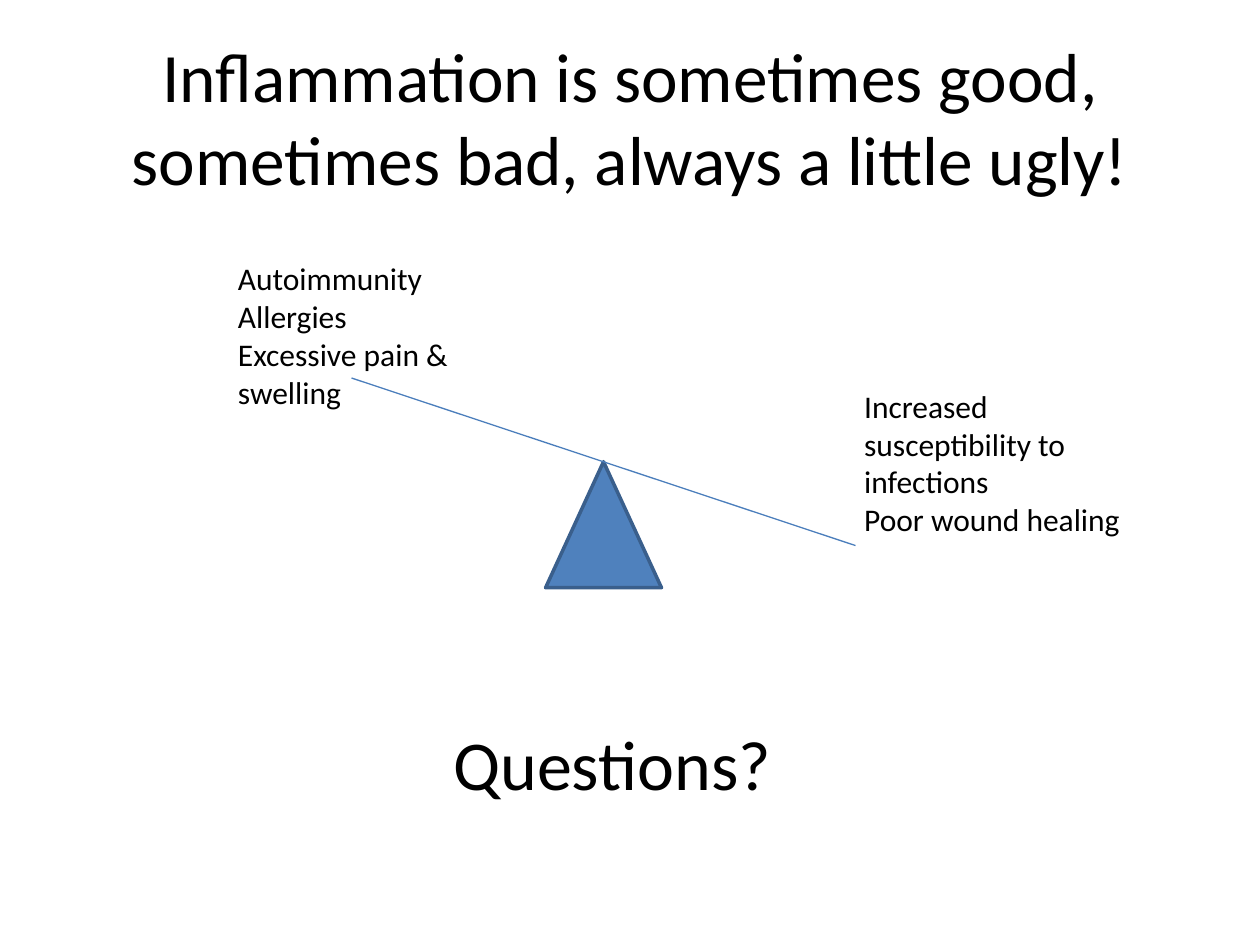
from dataclasses import dataclass

from lxml import etree
from pptx import Presentation
from pptx.dml.color import RGBColor
from pptx.enum.shapes import MSO_CONNECTOR, MSO_SHAPE
from pptx.enum.text import MSO_ANCHOR, MSO_AUTO_SIZE, PP_ALIGN
from pptx.oxml.ns import qn
from pptx.util import Inches, Pt

TITLE_ONLY = 5
LINE = MSO_CONNECTOR.STRAIGHT
TRIANGLE = MSO_SHAPE.ISOSCELES_TRIANGLE
CENTER = PP_ALIGN.CENTER
MIDDLE = MSO_ANCHOR.MIDDLE
FIT_SHAPE = MSO_AUTO_SIZE.SHAPE_TO_FIT_TEXT
NO_FIT = MSO_AUTO_SIZE.NONE


@dataclass(frozen=True)
class Theme:
    font: str = "Calibri"
    text: RGBColor = RGBColor(0x00, 0x00, 0x00)
    fulcrum: RGBColor = RGBColor(0x4F, 0x81, 0xBD)
    outline: RGBColor = RGBColor(0x3A, 0x5F, 0x8C)
    beam: RGBColor = RGBColor(0x4B, 0x7E, 0xBC)
    title_size: float = 39.6
    closing_size: float = 40
    label_size: float = 18
    outline_width: float = 2
    beam_width: float = 0.75


THEME = Theme()


def style(p, size):
    p.font.name = THEME.font
    p.font.size = Pt(size)
    p.font.color.rgb = THEME.text


def add_title(slide, box, text):
    title = slide.shapes.title
    title.left, title.top, title.width, title.height = map(Inches, box)
    tf = title.text_frame
    tf.text = text
    tf.word_wrap = True
    tf.auto_size = NO_FIT
    tf.vertical_anchor = MIDDLE
    p = tf.paragraphs[0]
    p.alignment = CENTER
    style(p, THEME.title_size)


def add_text(slide, box, lines, size, fit=NO_FIT):
    tf = slide.shapes.add_textbox(*map(Inches, box)).text_frame
    tf.word_wrap = True
    tf.auto_size = fit
    tf.text = "\n".join(lines)
    for p in tf.paragraphs:
        style(p, size)


def add_seesaw(slide, box, fulcrum_width, fulcrum_height):
    left, top, width, height = box
    pivot_x, pivot_y = left + width / 2, top + height / 2
    sp = slide.shapes.add_shape(
        TRIANGLE, Inches(pivot_x - fulcrum_width / 2), Inches(pivot_y),
        Inches(fulcrum_width), Inches(fulcrum_height))
    sp.shadow.inherit = False
    sp.fill.solid()
    sp.fill.fore_color.rgb = THEME.fulcrum
    sp.line.color.rgb = THEME.outline
    sp.line.width = Pt(THEME.outline_width)

    beam = slide.shapes.add_connector(
        LINE, Inches(left), Inches(top), Inches(left + width), Inches(top + height))
    beam.line.color.rgb = THEME.beam
    beam.line.width = Pt(THEME.beam_width)
    etree.SubElement(beam._element.spPr, qn("a:effectLst"))


def main():
    prs = Presentation()
    prs.slide_width, prs.slide_height = Inches(10), Inches(7.5)
    slide = prs.slides.add_slide(prs.slide_layouts[TITLE_ONLY])

    add_title(slide, (0.5, 0.3, 9, 1.25),
              "Inflammation is sometimes good, sometimes bad, always a little ugly!")
    add_text(slide, (3.5, 5.67, 2.75, 0.75), ["Questions?"], THEME.closing_size)
    add_seesaw(slide, (2.79, 3, 4, 1.33), 0.92, 1)
    add_text(slide, (1.79, 2.01, 2, 1.31),
             ["Autoimmunity", "Allergies", "Excessive pain & swelling"],
             THEME.label_size, FIT_SHAPE)
    add_text(slide, (6.76, 3.02, 2.42, 1.31),
             ["Increased susceptibility to infections", "Poor wound healing"],
             THEME.label_size, FIT_SHAPE)

    prs.save("out.pptx")


if __name__ == "__main__":
    main()
